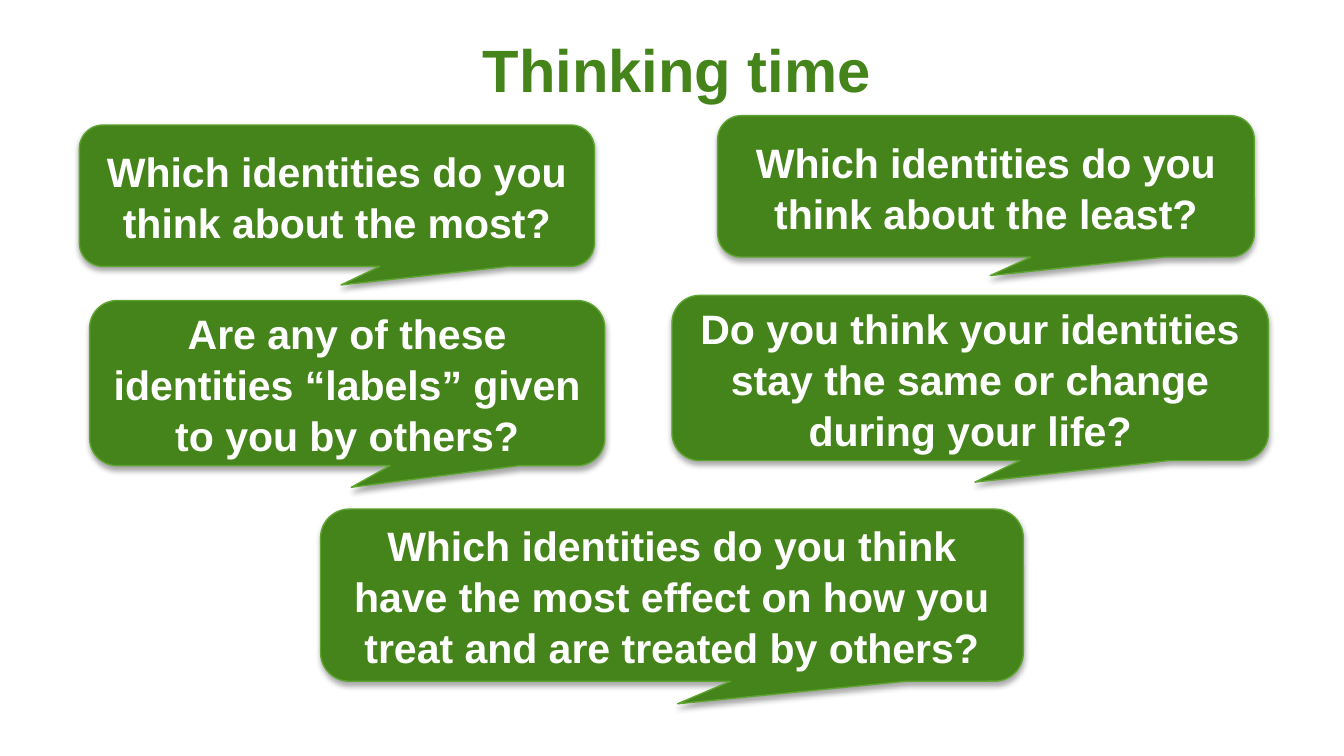
from dataclasses import dataclass

from lxml.etree import SubElement
from pptx import Presentation
from pptx.dml.color import RGBColor
from pptx.enum.shapes import MSO_SHAPE as Shape
from pptx.enum.text import MSO_ANCHOR as Anchor, PP_ALIGN as Align
from pptx.oxml.ns import qn
from pptx.util import Pt


@dataclass(frozen=True)
class Theme:
    font: str = "Arial"
    green: str = "44841A"
    edge: str = "5EA430"
    white: str = "FFFFFF"
    shadow: str = "000000"
    title_size: float = 32
    question_size: float = 22


def write_text(shape, text, *, font, size, color, spacing):
    frame = shape.text_frame
    frame.word_wrap = True
    frame.vertical_anchor = Anchor.MIDDLE
    para = frame.paragraphs[0]
    para.alignment = Align.CENTER
    para.line_spacing = spacing
    span = para.add_run()
    span.text = text
    span.font.name = font
    span.font.size = Pt(size)
    span.font.bold = True
    span.font.color.rgb = RGBColor.from_string(color)


def add_soft_shadow(shape, color):
    """Drop a 35% shadow straight below the shape."""
    shape.shadow.inherit = False
    effects = shape.element.spPr.find(qn("a:effectLst"))
    shadow = SubElement(
        effects, qn("a:outerShdw"), blurRad=str(Pt(3.1)), dist=str(Pt(1.8)),
        dir=str(90 * 60000), rotWithShape="0")
    tint = SubElement(shadow, qn("a:srgbClr"), val=color)
    SubElement(tint, qn("a:alpha"), val="35000")


class Painter:
    def __init__(self, page, theme):
        self.page = page
        self.theme = theme

    def title(self, text, *bounds):
        box = self.page.shapes.add_textbox(*map(Pt, bounds))
        write_text(box, text, font=self.theme.font, size=self.theme.title_size,
                   color=self.theme.green, spacing=0.9)

    def callout(self, text, *bounds):
        bubble = self.page.shapes.add_shape(
            Shape.ROUNDED_RECTANGULAR_CALLOUT, *map(Pt, bounds))
        for index, value in enumerate((0.008, 0.631, 0.167)):
            bubble.adjustments[index] = value
        bubble.fill.solid()
        bubble.fill.fore_color.rgb = RGBColor.from_string(self.theme.green)
        bubble.line.color.rgb = RGBColor.from_string(self.theme.edge)
        bubble.line.width = Pt(0.75)
        add_soft_shadow(bubble, self.theme.shadow)
        write_text(bubble, text, font=self.theme.font,
                   size=self.theme.question_size, color=self.theme.white,
                   spacing=1.04)


QUESTIONS = [
    ("Which identities do you think about the least?", 384.5, 62, 287.5, 75.75),
    ("Which identities do you think about the most?", 42.5, 67, 276, 75.75),
    ("Which identities do you think have the most effect on how you treat "
     "and are treated by others?", 171.75, 272.75, 376.5, 92.25),
    ("Do you think your identities stay the same or change during your life?",
     360, 158.25, 319.5, 88.5),
    ("Are any of these identities “labels” given to you by others?",
     48, 161, 276, 88.5),
]


def main():
    deck = Presentation()
    deck.slide_width, deck.slide_height = Pt(720), Pt(405)
    page = deck.slides.add_slide(deck.slide_layouts[6])
    painter = Painter(page, Theme())
    painter.title("Thinking time", 48, 11.5, 629.5, 55.5)
    for text, *bounds in QUESTIONS:
        painter.callout(text, *bounds)
    deck.save("out.pptx")


if __name__ == "__main__":
    main()
